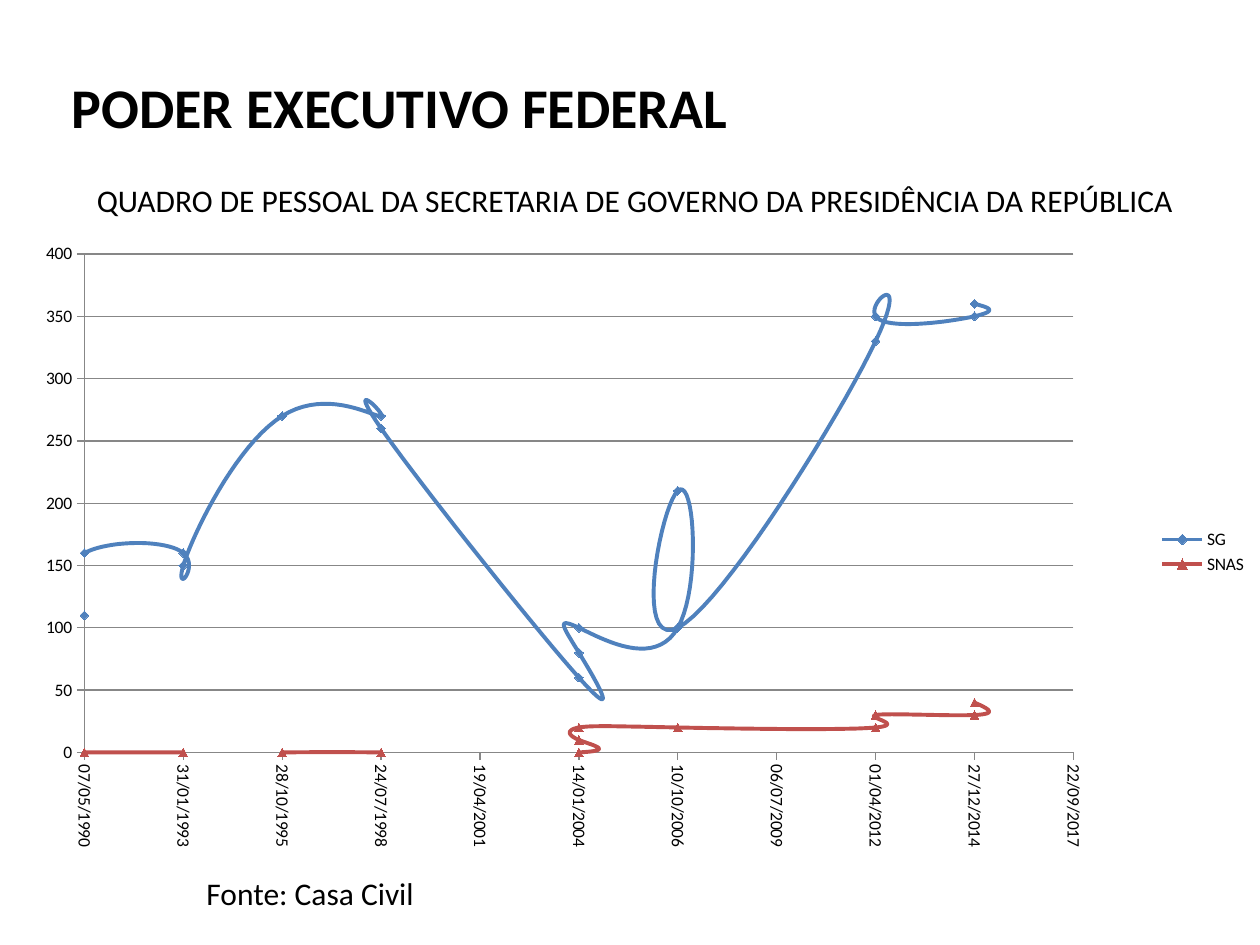
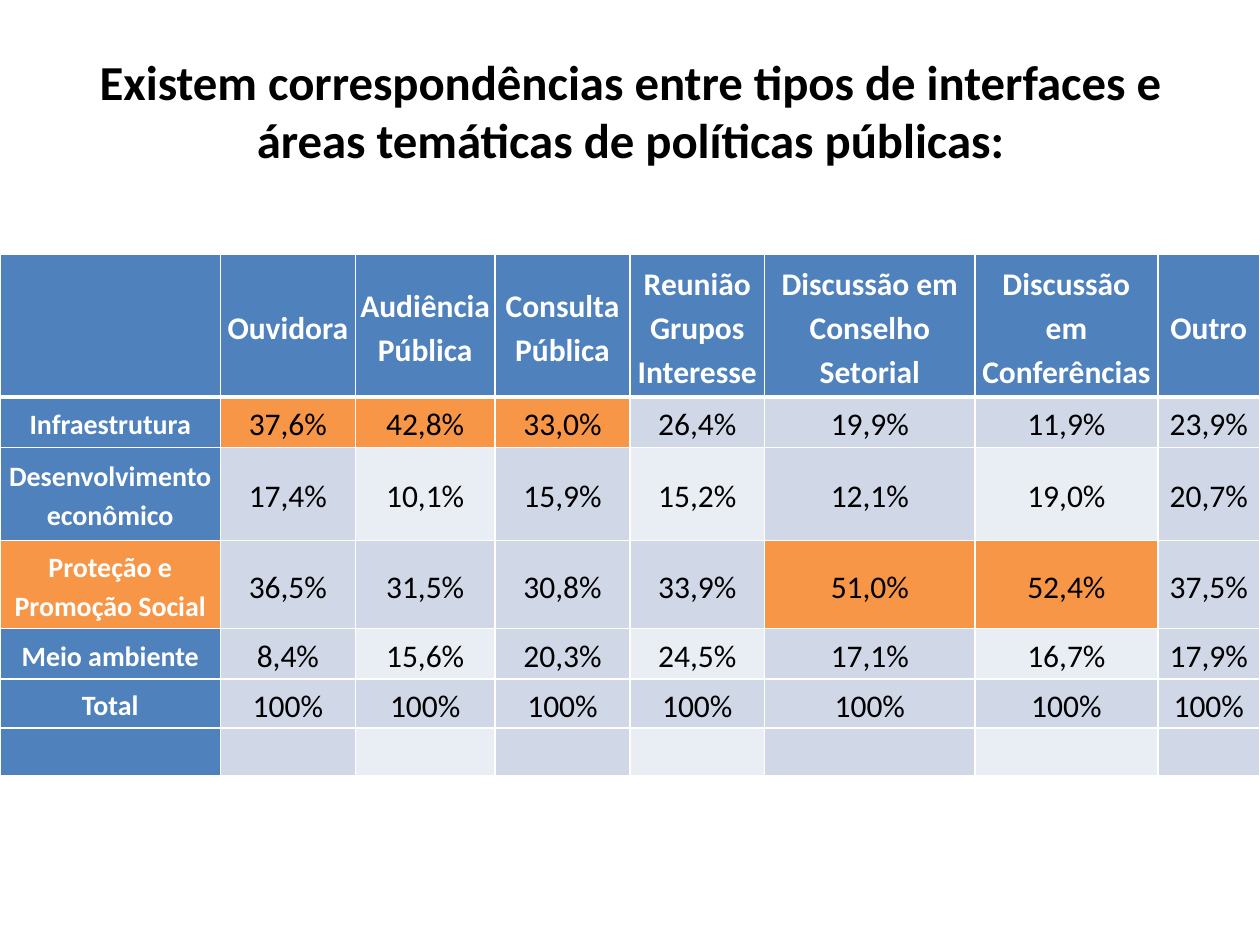
import pptx
import pptx.chart.data
import pptx.dml.color
import pptx.enum.chart
import pptx.enum.text
import pptx.oxml
import pptx.oxml.ns
import pptx.util

COLORS = {"text": "000000", "white": "FFFFFF", "blue": "4F81BD", "red": "C0504D",
          "orange": "F79646", "band": "D0D8E8", "light": "E9EDF4", "grid": "878787"}
FONT = "Calibri"
WIDTH, HEIGHT = 10, 7.5
CENTER = pptx.enum.text.PP_ALIGN.CENTER

DAYS = ([33000] * 2 + [34000] * 3 + [35000] * 2 + [36000] * 2 + [38000] * 4
        + [39000] * 3 + [41000] * 5 + [42000] * 2)
STAFF = {
    "SG": [110, 160, 160, 150, 150, 270, 270, 270, 260, 60, 60, 80,
           100, 100, 210, 100, 330, 350, 350, 350, 350, 350, 360],
    "SNAS": [0] * 10 + [10] + [20] * 8 + [30] * 3 + [40],
}
MARKERS = {
    "SG": ("blue", pptx.enum.chart.XL_MARKER_STYLE.DIAMOND),
    "SNAS": ("red", pptx.enum.chart.XL_MARKER_STYLE.TRIANGLE),
}

INTERFACES = [
    ["", "Ouvidora", "Audiência Pública", "Consulta Pública", "Reunião Grupos Interesse",
     "Discussão em Conselho Setorial", "Discussão em Conferências", "Outro"],
    ["Infraestrutura", "37,6%", "42,8%", "33,0%", "26,4%", "19,9%", "11,9%", "23,9%"],
    ["Desenvolvimento econômico", "17,4%", "10,1%", "15,9%", "15,2%", "12,1%", "19,0%", "20,7%"],
    ["Proteção e Promoção Social", "36,5%", "31,5%", "30,8%", "33,9%", "51,0%", "52,4%", "37,5%"],
    ["Meio ambiente", "8,4%", "15,6%", "20,3%", "24,5%", "17,1%", "16,7%", "17,9%"],
    ["Total"] + ["100%"] * 7,
    [""] * 8,
]
COLUMN_WIDTHS = [1.75, 1.07, 1.11, 1.07, 1.07, 1.67, 1.45, 0.81]
ROW_HEIGHTS = [1.13, 0.4, 0.74, 0.7, 0.4, 0.39, 0.38]
HIGHLIGHTS = {(1, 1), (1, 2), (1, 3), (3, 0), (3, 5), (3, 6)}


def rgb(name):
    return pptx.dml.color.RGBColor.from_string(COLORS[name])


def place(left, top, width, height):
    """Turn shares of the slide's size into lengths."""
    return [pptx.util.Inches(round(share * side, 2)) for share, side in
            ((left, WIDTH), (top, HEIGHT), (width, WIDTH), (height, HEIGHT))]


def style_font(font, size, color="text", bold=False):
    font.name, font.size, font.bold = FONT, pptx.util.Pt(size), bold
    font.color.rgb = rgb(color)


def add_text(slide, text, box, size=18, bold=False, wrap=False, align=None):
    frame = slide.shapes.add_textbox(*place(*box)).text_frame
    frame.word_wrap = wrap
    paragraph = frame.paragraphs[0]
    paragraph.text = text
    paragraph.alignment = align
    style_font(paragraph.font, size, bold=bold)


def add_title(slide, text, box, size, align=None):
    add_text(slide, text, box, size, bold=True, wrap=True, align=align)


def set_plot_area(chart, left, top, width, height):
    """Fix the inner plot area, given as shares of the chart."""
    plot_area = chart._chartSpace.chart.plotArea
    for old in plot_area.findall(pptx.oxml.ns.qn("c:layout")):
        plot_area.remove(old)
    sizes = "".join(f'<c:{tag} val="{share}"/>' for tag, share in
                    zip("xywh", (left, top, width, height)))
    plot_area.insert(0, pptx.oxml.parse_xml(
        f'<c:layout {pptx.oxml.ns.nsdecls("c")}><c:manualLayout>'
        '<c:layoutTarget val="inner"/><c:xMode val="edge"/><c:yMode val="edge"/>'
        f'{sizes}</c:manualLayout></c:layout>'))


def style_axis(axis, low, high, step, number_format):
    axis.minimum_scale, axis.maximum_scale, axis.major_unit = low, high, step
    axis.major_tick_mark = pptx.enum.chart.XL_TICK_MARK.OUTSIDE
    axis.minor_tick_mark = pptx.enum.chart.XL_TICK_MARK.NONE
    axis.tick_labels.number_format = number_format
    axis.tick_labels.number_format_is_linked = False
    style_font(axis.tick_labels.font, 10)
    axis.format.line.color.rgb = rgb("grid")


def style_series(series):
    color, marker = MARKERS[series.name]
    series.format.line.color.rgb = rgb(color)
    series.format.line.width = pptx.util.Pt(2.25)
    series.marker.style = marker
    series.marker.size = 5
    series.marker.format.fill.solid()
    series.marker.format.fill.fore_color.rgb = rgb(color)
    series.marker.format.line.color.rgb = rgb(color)
    series._element.find(pptx.oxml.ns.qn("c:smooth")).set("val", "1")


def add_staff_chart(slide, box):
    data = pptx.chart.data.XyChartData()
    for name, counts in STAFF.items():
        series = data.add_series(name)
        for day, count in zip(DAYS, counts):
            series.add_data_point(day, count)
    chart = slide.shapes.add_chart(
        pptx.enum.chart.XL_CHART_TYPE.XY_SCATTER_SMOOTH, *place(*box), data).chart
    style_font(chart.font, 10)
    chart.has_title = False
    chart.has_legend = True
    chart.legend.position = pptx.enum.chart.XL_LEGEND_POSITION.RIGHT
    chart.legend.include_in_layout = False
    dates, counts = chart.category_axis, chart.value_axis
    style_axis(dates, 33000, 43000, 1000, "dd/mm/yyyy")
    style_axis(counts, 0, 400, 50, "General")
    dates.has_major_gridlines = False
    counts.has_major_gridlines = True
    counts.major_gridlines.format.line.color.rgb = rgb("grid")
    dates_body = dates._element.find(
        f'{pptx.oxml.ns.qn("c:txPr")}/{pptx.oxml.ns.qn("a:bodyPr")}')
    dates_body.set("rot", "5400000")
    dates_body.set("vert", "horz")
    chart.plots[0].vary_by_categories = False
    for series in chart.plots[0].series:
        style_series(series)
    set_plot_area(chart, 0.067, 0.031, 0.785, 0.785)


def cell_fill(row, column):
    if (row, column) in HIGHLIGHTS:
        return "orange"
    if row == 0 or column == 0:
        return "blue"
    return "light" if row % 2 == 0 and column % 2 == 0 else "band"


def set_borders(cell, row):
    widths = {"L": 1, "R": 1, "T": 3 if row == 1 else 1, "B": 3 if row == 0 else 1}
    properties = cell._tc.get_or_add_tcPr()
    for index, (side, points) in enumerate(widths.items()):
        properties.insert(index, pptx.oxml.parse_xml(
            f'<a:ln{side} {pptx.oxml.ns.nsdecls("a")} w="{pptx.util.Pt(points)}">'
            f'<a:solidFill><a:srgbClr val="{COLORS["white"]}"/></a:solidFill></a:ln{side}>'))


def fill_cell(cell, text, row, column):
    cell.margin_left = cell.margin_right = pptx.util.Inches(0.04)
    cell.margin_top = cell.margin_bottom = 0
    cell.vertical_anchor = pptx.enum.text.MSO_ANCHOR.MIDDLE
    cell.fill.solid()
    cell.fill.fore_color.rgb = rgb(cell_fill(row, column))
    set_borders(cell, row)
    heading = row == 0 or column == 0
    paragraph = cell.text_frame.paragraphs[0]
    paragraph.text = text
    paragraph.alignment = CENTER
    paragraph.line_spacing = 1.15
    style_font(paragraph.font, 16 if column == 0 else 18,
               "white" if heading else "text", heading)


def add_interface_table(slide, box):
    table = slide.shapes.add_table(len(ROW_HEIGHTS), len(COLUMN_WIDTHS), *place(*box)).table
    for column, width in zip(table.columns, COLUMN_WIDTHS):
        column.width = pptx.util.Inches(width)
    for row, height in zip(table.rows, ROW_HEIGHTS):
        row.height = pptx.util.Inches(height)
    for row, texts in enumerate(INTERFACES):
        for column, text in enumerate(texts):
            fill_cell(table.cell(row, column), text, row, column)


def main():
    deck = pptx.Presentation()
    deck.slide_width, deck.slide_height = pptx.util.Inches(WIDTH), pptx.util.Inches(HEIGHT)
    blank = deck.slide_layouts[6]

    staff = deck.slides.add_slide(blank)
    add_staff_chart(staff, (0, 0.248, 1, 0.672))
    add_text(staff, "Fonte: Casa Civil", (0.154, 0.919, 0.187, 0.053))
    add_text(staff, "QUADRO DE PESSOAL DA SECRETARIA DE GOVERNO DA PRESIDÊNCIA DA REPÚBLICA",
             (0.067, 0.185, 0.883, 0.053))
    add_title(staff, "PODER EXECUTIVO FEDERAL", (0.047, 0.071, 0.9, 0.093), 32)

    interfaces = deck.slides.add_slide(blank)
    add_title(interfaces, "Existem correspondências entre tipos de interfaces e "
              "áreas temáticas de políticas públicas:",
              (0.054, 0.048, 0.893, 0.161), 27.9, CENTER)
    add_interface_table(interfaces, (0, 0.269, 1, 0.552))

    deck.save("out.pptx")


if __name__ == "__main__":
    main()
